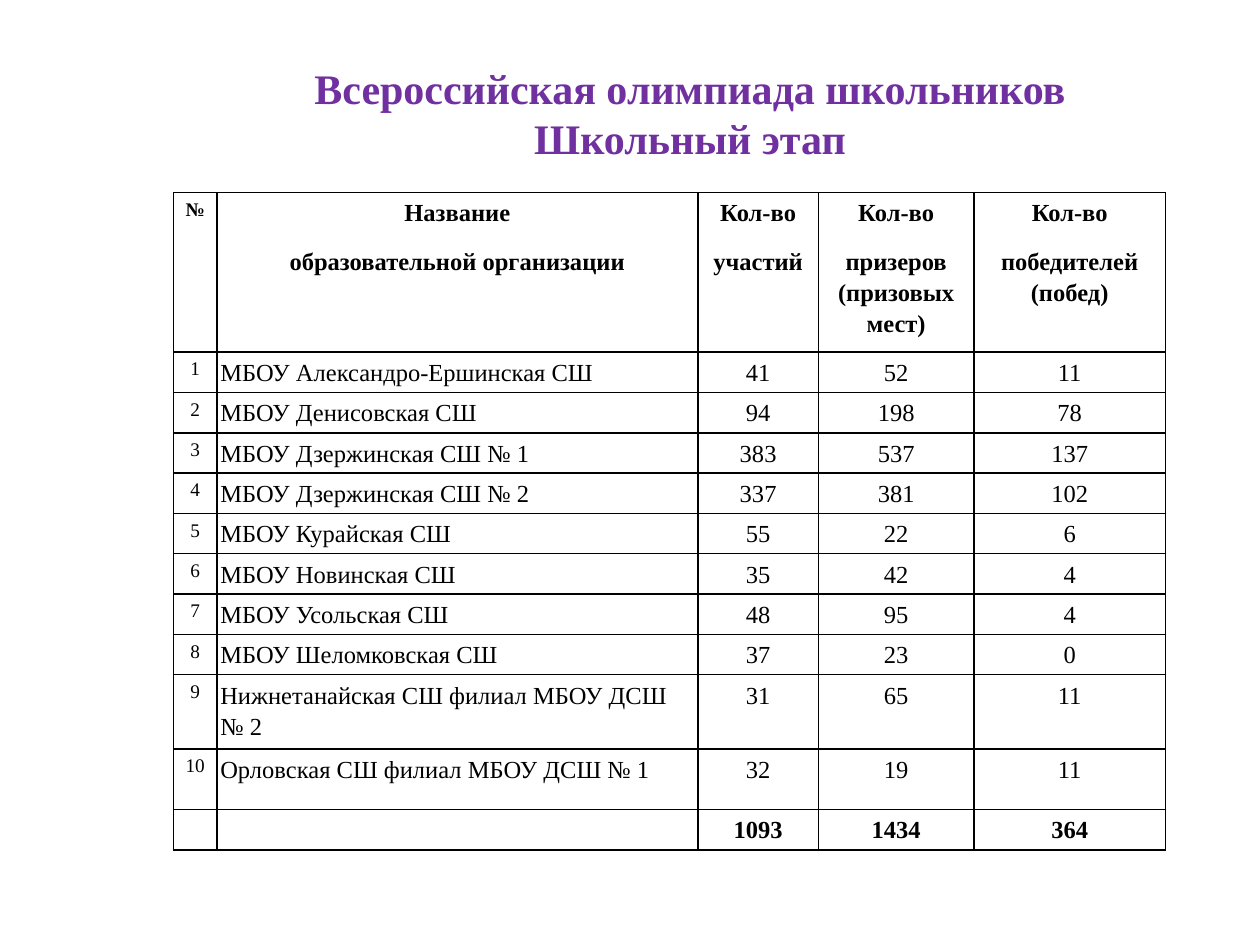
from lxml import etree
from pptx import Presentation
from pptx.dml.color import RGBColor
from pptx.enum.text import MSO_ANCHOR, PP_ALIGN
from pptx.oxml.ns import qn
from pptx.util import Pt

PURPLE = RGBColor(0x70, 0x30, 0xA0)
BLACK = RGBColor(0, 0, 0)
FONT = "Times New Roman"

HEADER = ["№", "Название\nобразовательной организации", "Кол-во\nучастий",
          "Кол-во\nпризеров (призовых мест)", "Кол-во\nпобедителей (побед)"]
SCHOOLS = [
    ("МБОУ Александро-Ершинская СШ", 41, 52, 11),
    ("МБОУ Денисовская СШ", 94, 198, 78),
    ("МБОУ Дзержинская СШ № 1", 383, 537, 137),
    ("МБОУ Дзержинская СШ № 2", 337, 381, 102),
    ("МБОУ Курайская СШ", 55, 22, 6),
    ("МБОУ Новинская СШ", 35, 42, 4),
    ("МБОУ Усольская СШ", 48, 95, 4),
    ("МБОУ Шеломковская СШ", 37, 23, 0),
    ("Нижнетанайская СШ филиал МБОУ ДСШ № 2", 31, 65, 11),
    ("Орловская СШ филиал МБОУ ДСШ № 1", 32, 19, 11),
]
TOTAL = ["", "", 1093, 1434, 364]
COL_WIDTHS = [24.7, 274.9, 68.9, 88.9, 109.4]
ROW_HEIGHTS = [91.2] + [23.07] * 8 + [42.3, 34.8, 23.07]


def style_runs(p, size, color, bold):
    for r in p.runs:
        r.font.name = FONT
        r.font.size = Pt(size)
        r.font.bold = bold
        r.font.color.rgb = color


def add_borders(cell):
    tc_pr = cell._tc.get_or_add_tcPr()
    for side in ("lnL", "lnR", "lnT", "lnB"):
        ln = etree.SubElement(tc_pr, qn(f"a:{side}"), w=str(Pt(1)))
        fill = etree.SubElement(ln, qn("a:solidFill"))
        etree.SubElement(fill, qn("a:srgbClr"), val=str(BLACK))


prs = Presentation()
prs.slide_width, prs.slide_height = Pt(720), Pt(540)
s = prs.slides.add_slide(prs.slide_layouts[5])

title = s.shapes.title
title.left, title.top, title.width, title.height = Pt(170), Pt(31.7), Pt(448.6), Pt(65.5)
tf = title.text_frame
tf.text = "Всероссийская олимпиада школьников\nШкольный этап"
tf.word_wrap = True
tf.margin_left = tf.margin_right = 0
tf.vertical_anchor = MSO_ANCHOR.MIDDLE
for p in tf.paragraphs:
    p.alignment = PP_ALIGN.CENTER
    style_runs(p, 24, PURPLE, True)

rows = [HEADER] + [(n, *school) for n, school in enumerate(SCHOOLS, 1)] + [TOTAL]
table = s.shapes.add_table(len(rows), len(COL_WIDTHS), Pt(99.2), Pt(110),
                           Pt(sum(COL_WIDTHS)), Pt(sum(ROW_HEIGHTS))).table
table.first_row = table.horz_banding = False
for column, width in zip(table.columns, COL_WIDTHS):
    column.width = Pt(width)
for row, height in zip(table.rows, ROW_HEIGHTS):
    row.height = Pt(height)

for i, values in enumerate(rows):
    bold = i in (0, len(rows) - 1)
    for j, value in enumerate(values):
        cell = table.cell(i, j)
        cell.margin_left = cell.margin_right = Pt(2)
        cell.margin_top = cell.margin_bottom = Pt(2)
        add_borders(cell)
        cell.fill.background()
        cell.text_frame.text = str(value)
        size = 11 if j == 0 else 14
        for p in cell.text_frame.paragraphs:
            p.alignment = PP_ALIGN.LEFT if j == 1 and i > 0 else PP_ALIGN.CENTER
            p.line_spacing = 1.15
            p.space_after = Pt(10)
            style_runs(p, size, BLACK, bold)
            if not p.runs:  # keeps an empty cell from stretching its row
                etree.SubElement(p._p, qn("a:endParaRPr"), sz=str(size * 100))

prs.save("out.pptx")
